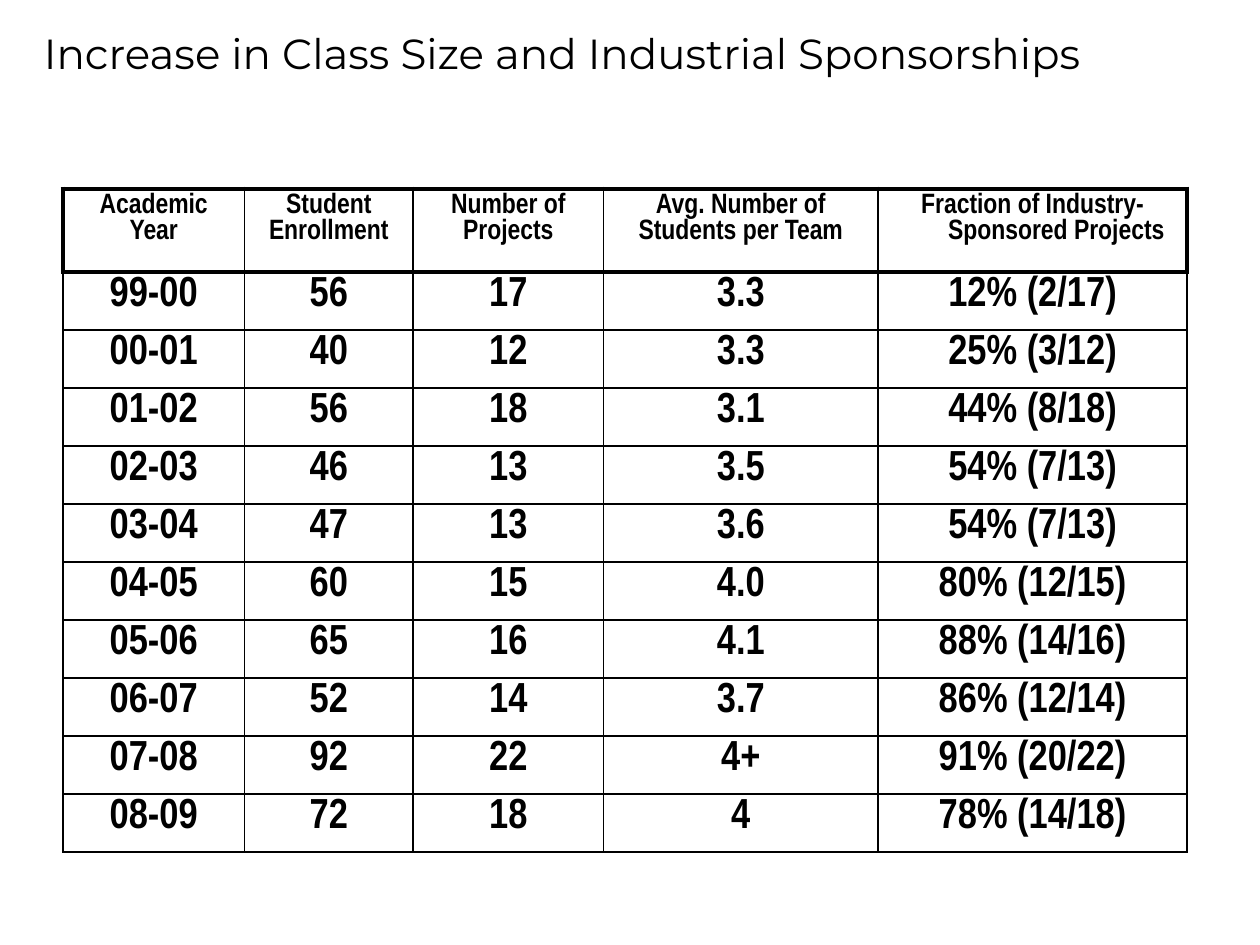
from lxml import etree
from pptx import Presentation
from pptx.dml.color import RGBColor
from pptx.enum import text
from pptx.oxml import ns
from pptx.util import Inches, Pt

TITLE = "Increase in Class Size and Industrial Sponsorships"
HEADS = ["Academic\nYear", "Student\nEnrollment", "Number of\nProjects",
         "Avg. Number of\nStudents per Team",
         "Fraction of Industry-Sponsored Projects"]
YEARS = [
    ("99-00", "56", "17", "3.3", "12% (2/17)"),
    ("00-01", "40", "12", "3.3", "25% (3/12)"),
    ("01-02", "56", "18", "3.1", "44% (8/18)"),
    ("02-03", "46", "13", "3.5", "54% (7/13)"),
    ("03-04", "47", "13", "3.6", "54% (7/13)"),
    ("04-05", "60", "15", "4.0", "80% (12/15)"),
    ("05-06", "65", "16", "4.1", "88% (14/16)"),
    ("06-07", "52", "14", "3.7", "86% (12/14)"),
    ("07-08", "92", "22", "4+", "91% (20/22)"),
    ("08-09", "72", "18", "4", "78% (14/18)"),
]
WIDTHS = [1.44, 1.34, 1.51, 2.18, 2.45]
HEAD_H, BODY_H = 0.66, 4.42
ROW_H = BODY_H / len(YEARS)
THIN, THICK = 1, 3
BLACK = RGBColor(0, 0, 0)


def style(font, name, size, bold=False):
    font.name, font.size, font.bold = name, Pt(size), bold
    font.color.rgb = BLACK


def border(cell, widths):
    props = cell._tc.get_or_add_tcPr()
    for i, (side, width) in enumerate(zip("LRTB", widths)):
        line = etree.Element(ns.qn("a:ln" + side), w=str(Pt(width)))
        fill = etree.SubElement(line, ns.qn("a:solidFill"))
        etree.SubElement(fill, ns.qn("a:srgbClr"), val=str(BLACK))
        props.insert(i, line)


def write(cell, words, size):
    cell.margin_top = cell.margin_bottom = Inches(0.03)
    cell.text_frame.text = words
    for para in cell.text_frame.paragraphs:
        para.alignment = text.PP_ALIGN.CENTER
        props = para._p.get_or_add_pPr()
        props.set("marL", str(Inches(0.38)))
        props.set("indent", str(Inches(-0.38)))
        for run in para.runs:
            style(run.font, "Arial Narrow", size, True)


def add_title(slide):
    box = slide.shapes.add_textbox(Inches(0.25), 0, Inches(9.58), Inches(0.67))
    frame = box.text_frame
    frame.word_wrap = True
    frame.vertical_anchor = text.MSO_ANCHOR.BOTTOM
    frame.text = TITLE
    style(frame.paragraphs[0].runs[0].font, "Montserrat", 24)


def add_grid(slide):
    rows = [HEADS] + YEARS
    table = slide.shapes.add_table(
        len(rows), len(WIDTHS), Inches(0.5), Inches(1.5),
        Inches(sum(WIDTHS)), Inches(HEAD_H + BODY_H)).table
    table.first_row = table.horz_banding = False
    for col, width in zip(table.columns, WIDTHS):
        col.width = Inches(width)
    for r, row in enumerate(rows):
        head = r == 0
        table.rows[r].height = Inches(HEAD_H if head else ROW_H)
        for c, words in enumerate(row):
            cell = table.cell(r, c)
            cell.fill.background()
            write(cell, words, 16 if head else 24)
            thick = (head and c == 0, head and c == len(row) - 1, r < 2, head)
            border(cell, [THICK if t else THIN for t in thick])


def main():
    deck = Presentation()
    deck.slide_width, deck.slide_height = Inches(10), Inches(7.5)
    slide = deck.slides.add_slide(deck.slide_layouts[6])
    add_title(slide)
    add_grid(slide)
    deck.save("out.pptx")


if __name__ == "__main__":
    main()
